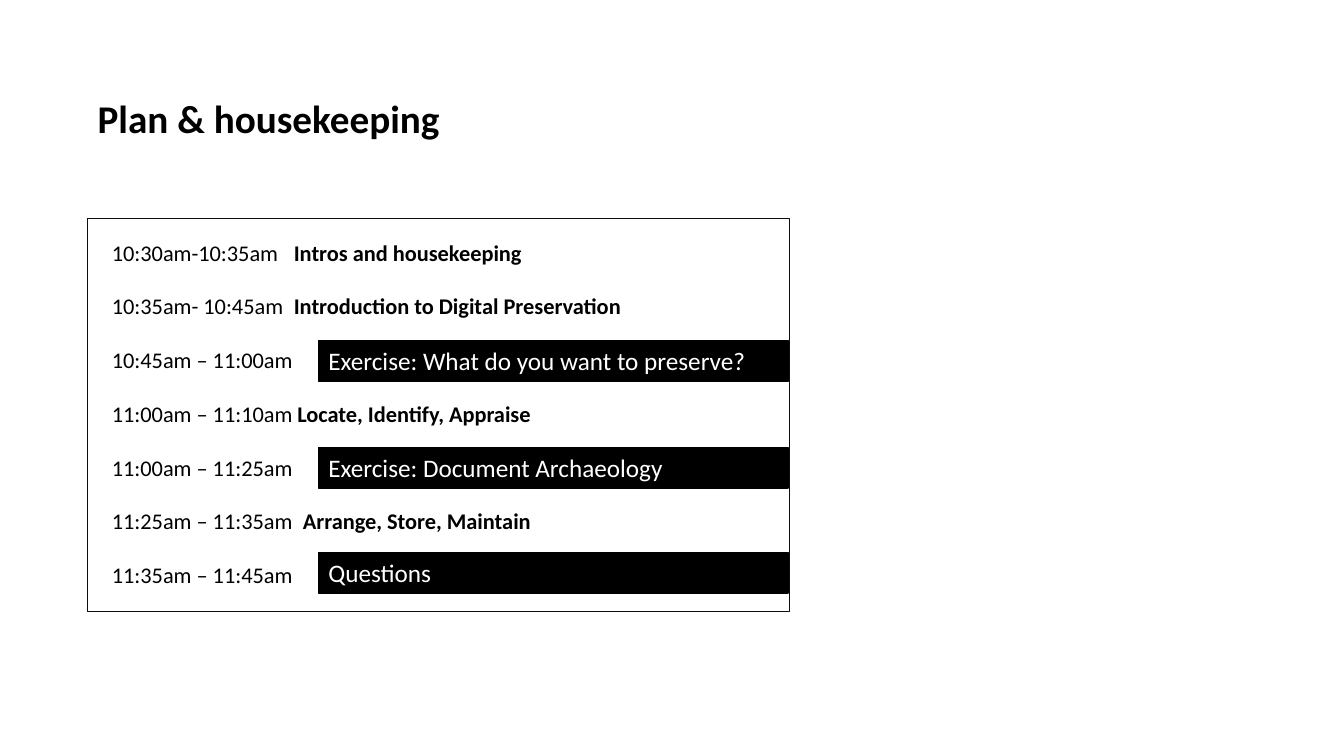
from lxml.etree import SubElement
from pptx import Presentation
from pptx.dml.color import RGBColor
from pptx.enum.shapes import MSO_SHAPE
from pptx.enum.text import MSO_ANCHOR, PP_ALIGN
from pptx.oxml.ns import qn
from pptx.util import Pt

BLACK = RGBColor(0x00, 0x00, 0x00)
FRAME = RGBColor(0x0D, 0x0D, 0x0D)
WHITE = RGBColor(0xFF, 0xFF, 0xFF)

AGENDA = [
    ("10:30am-10:35am", "Intros and housekeeping", 130),
    ("10:35am- 10:45am", "Introduction to Digital Preservation", 130),
    ("10:45am – 11:00am", "", 0),
    ("11:00am – 11:10am", "Locate, Identify, Appraise", 132.5),
    ("11:00am – 11:25am", "", 0),
    ("11:25am – 11:35am", "Arrange, Store, Maintain", 136.5),
    ("11:35am – 11:45am", "", 0),
]
ACTIVITIES = [
    ("Exercise: What do you want to preserve?", 243.2),
    ("Exercise: Document Archaeology", 319.5),
    ("Questions", 394.6),
]


def apply(target, **values):
    """Set each named attribute on the target."""
    for name, value in values.items():
        setattr(target, name, value)


def add_run(paragraph, text, size, color=BLACK, bold=False):
    """Append a formatted run to a paragraph."""
    run = paragraph.add_run()
    run.text = text
    apply(run.font, name="Calibri", size=Pt(size), bold=bold)
    run.font.color.rgb = color


def add_tab_stop(paragraph, position):
    """Give a paragraph one left tab stop."""
    tabs = SubElement(paragraph._p.get_or_add_pPr(), qn("a:tabLst"))
    SubElement(tabs, qn("a:tab"), pos=str(Pt(position)), algn="l")


def add_box(slide, left, top, width, height, line_color, line_width):
    """Add a rectangle without shadow, with left-aligned text."""
    shape = slide.shapes.add_shape(
        MSO_SHAPE.RECTANGLE, Pt(left), Pt(top), Pt(width), Pt(height))
    shape.shadow.inherit = False
    shape.line.color.rgb = line_color
    shape.line.width = Pt(line_width)
    shape.text_frame.word_wrap = True
    shape.text_frame.paragraphs[0].alignment = PP_ALIGN.LEFT
    return shape


def add_title(slide, text):
    """Place and format the title placeholder."""
    title = slide.shapes.title
    apply(title, left=Pt(62.6), top=Pt(64.1), width=Pt(376.6), height=Pt(41))
    title.text_frame.vertical_anchor = MSO_ANCHOR.TOP
    paragraph = title.text_frame.paragraphs[0]
    paragraph.alignment = PP_ALIGN.LEFT
    add_run(paragraph, text, 28, bold=True)


def add_agenda(slide):
    """Add the framed list of times and topics."""
    box = add_box(slide, 62.6, 156.2, 501.1, 280.8, FRAME, 0.75)
    box.fill.background()
    frame = box.text_frame
    apply(frame, vertical_anchor=MSO_ANCHOR.TOP, margin_left=Pt(17.3),
          margin_right=Pt(17.3), margin_top=Pt(14.4), margin_bottom=Pt(14.4))
    for index, (time, topic, tab) in enumerate(AGENDA):
        paragraph = frame.add_paragraph() if index else frame.paragraphs[0]
        apply(paragraph, alignment=PP_ALIGN.LEFT, space_after=Pt(19.2))
        if topic:
            add_tab_stop(paragraph, tab)
            add_run(paragraph, time + "\t", 16)
            add_run(paragraph, topic, 16, bold=True)
        else:
            add_run(paragraph, time, 16)


def add_activity(slide, text, top):
    """Add a black bar naming an activity."""
    bar = add_box(slide, 227.5, top, 335.5, 29.1, BLACK, 1)
    bar.fill.solid()
    bar.fill.fore_color.rgb = BLACK
    bar.text_frame.vertical_anchor = MSO_ANCHOR.TOP
    add_run(bar.text_frame.paragraphs[0], text, 18, WHITE)


def main():
    """Build and save the slide."""
    presentation = Presentation()
    apply(presentation, slide_width=Pt(960), slide_height=Pt(540))
    slide = presentation.slides.add_slide(presentation.slide_layouts[5])
    add_title(slide, "Plan & housekeeping")
    add_agenda(slide)
    for text, top in ACTIVITIES:
        add_activity(slide, text, top)
    presentation.save("out.pptx")


if __name__ == "__main__":
    main()
